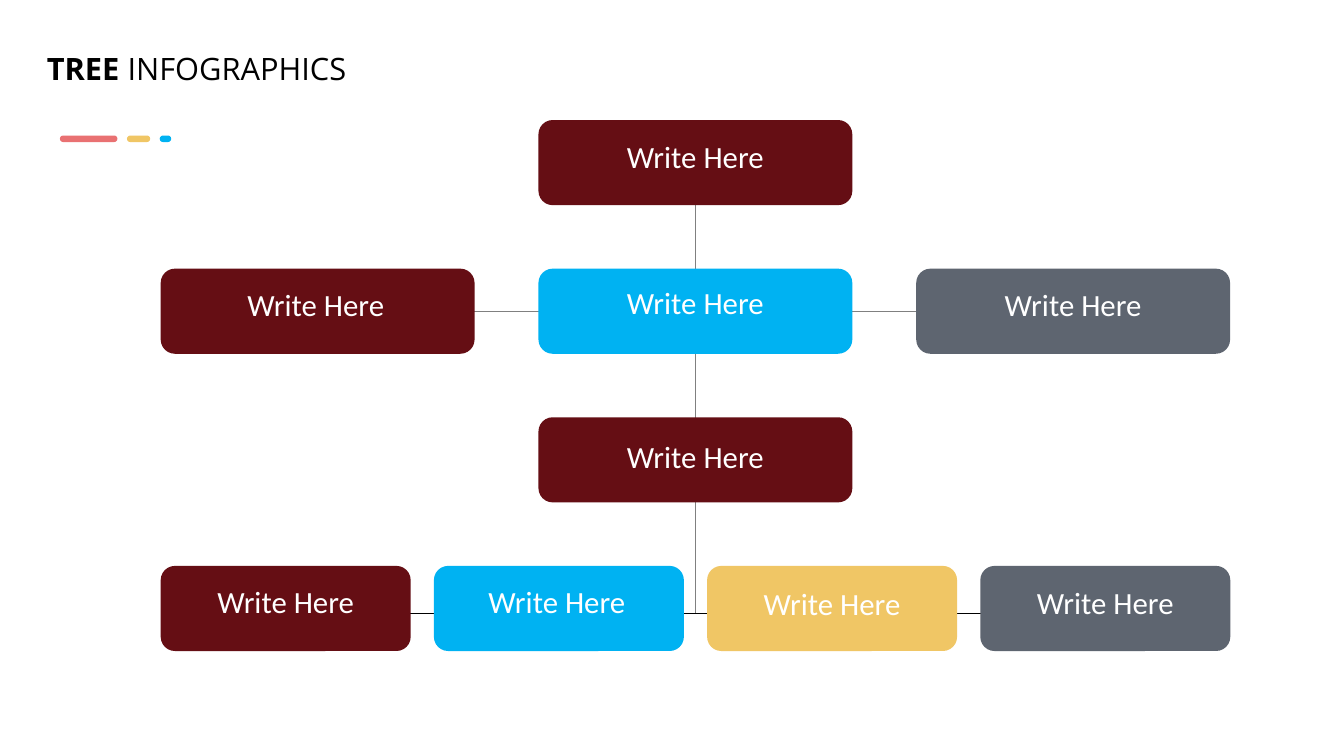
"""Build the tree infographic slide."""
from lxml import etree
from pptx import Presentation
from pptx import util as u
from pptx.dml.color import RGBColor
from pptx.enum import shapes, text
from pptx.oxml.ns import qn

Cm, Pt = u.Cm, u.Pt
COLORS = {"maroon": "650E14", "blue": "00B2F2", "slate": "5E6570", "gold": "F0C665",
          "coral": "E97172", "gray": "808080", "black": "000000", "white": "FFFFFF"}

prs = Presentation()
prs.slide_width, prs.slide_height = Cm(67.74), Cm(38.1)
s = prs.slides.add_slide(prs.slide_layouts[6])


def rgb(name):
    return RGBColor.from_string(COLORS[name])


def add_text(runs, x, y, w, h=2.13, font="Calibri", size=44, color="white",
             align=text.PP_ALIGN.CENTER, wrap=False):
    tf = s.shapes.add_textbox(Cm(x), Cm(y), Cm(w), Cm(h)).text_frame
    tf.word_wrap = wrap
    tf.auto_size = text.MSO_AUTO_SIZE.SHAPE_TO_FIT_TEXT
    p = tf.paragraphs[0]
    p.alignment = align
    for words, bold in runs:
        r = p.add_run()
        r.text = words
        r.font.name, r.font.size, r.font.bold = font, Pt(size), bold
        r.font.color.rgb = rgb(color)


lines = [
    (35.05, 8.2, 35.05, 30.91, "gray"),
    (17.81, 30.91, 52.3, 30.91, "black"),
    (18.67, 15.7, 53.16, 15.7, "gray"),
]
for x1, y1, x2, y2, color in lines:
    line = s.shapes.add_connector(shapes.MSO_CONNECTOR.STRAIGHT, Cm(x1), Cm(y1), Cm(x2), Cm(y2))
    line.line.color.rgb = rgb(color)
    line.line.width = Pt(2.25)
    etree.SubElement(line._element.spPr, qn("a:effectLst"))

left, top, row_step, box_h, label_w = 8.1, 6.05, 7.49, 4.29, 7.47
wide, narrow = (15.82, 19.04), (12.6, 13.77)
boxes = [
    (wide, 0, 1, "maroon", 0, 0.76),
    (wide, 1, 0, "maroon", -0.09, 0.74),
    (wide, 1, 1, "blue", 0, 0.61),
    (wide, 1, 2, "slate", 0, 0.74),
    (wide, 2, 1, "maroon", 0, 0.89),
    (narrow, 3, 0, "maroon", 0, 0.74),
    (narrow, 3, 1, "blue", -0.1, 0.74),
    (narrow, 3, 2, "gold", 0, 0.81),
    (narrow, 3, 3, "slate", 0, 0.79),
]
bars = [(3.02, 2.9, "coral"), (6.4, 1.17, "gold"), (8.05, 0.58, "blue")]

rects = [(left + col * step, top + row * row_step, w, box_h, 0.1667, color)
         for (w, step), row, col, color, _, _ in boxes]
rects += [(x, 6.83, w, 0.33, 0.5, color) for x, w, color in bars]
for x, y, w, h, radius, color in rects:
    sp = s.shapes.add_shape(shapes.MSO_SHAPE.ROUNDED_RECTANGLE, Cm(x), Cm(y), Cm(w), Cm(h))
    sp.adjustments[0] = radius
    sp.shadow.inherit = False
    sp.fill.solid()
    sp.fill.fore_color.rgb = rgb(color)
    sp.line.fill.background()

for (w, step), row, col, _, shift, drop in boxes:
    add_text([("Write Here", False)], left + col * step + (w - label_w) / 2 + shift,
             top + row * row_step + drop, label_w)

add_text([("TREE ", True), ("INFOGRAPHICS", False)], 2.11, 2.39, 23.85, font="Open Sans",
         color="black", align=text.PP_ALIGN.LEFT, wrap=True)

prs.save("out.pptx")
